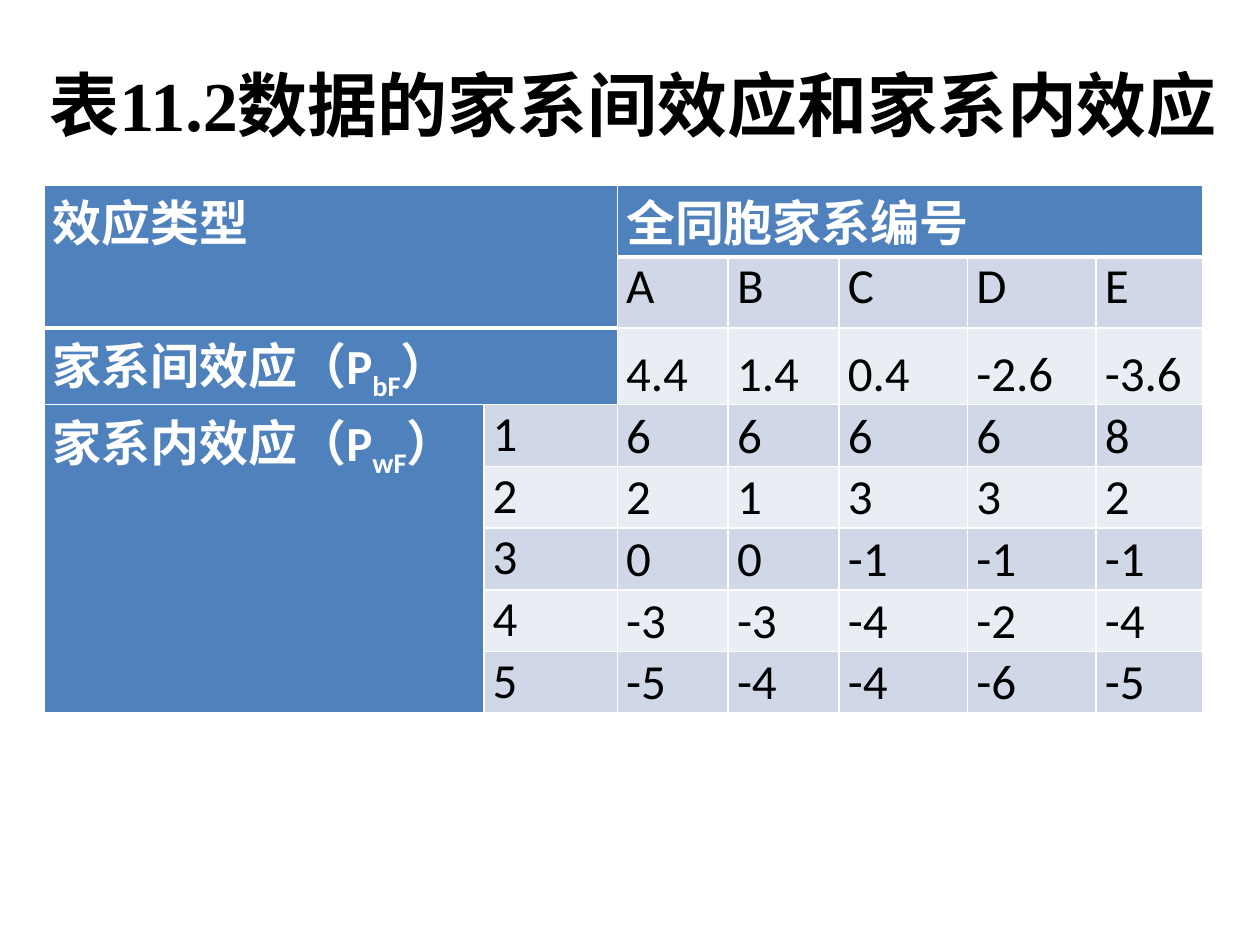
from pptx import Presentation, util as u
from pptx.dml import color
from pptx.enum import text
from pptx.oxml import parse_xml
from pptx.oxml.ns import nsdecls

BLUE, WHITE, BLACK = "4F81BD", "FFFFFF", "000000"
BANDS = ["D0D8E8", "E9EDF4"]
COLS = [3.49, 1.06, 0.88, 0.88, 1.02, 1.02, 0.85]
ROWS = [0.57, 0.56, 0.61] + [0.49] * 5
HEAD = "效应类型", "全同胞家系编号"
BETWEEN, WITHIN = "家系间效应（P|bF|）", "家系内效应（P|wF|）"
DATA = [
    ["A", "B", "C", "D", "E"],
    [4.4, 1.4, 0.4, -2.6, -3.6],
    [6, 6, 6, 6, 8],
    [2, 1, 3, 3, 2],
    [0, 0, -1, -1, -1],
    [-3, -3, -4, -2, -4],
    [-5, -4, -4, -6, -5],
]


def rgb(code):
    """Turn a hex string into a colour."""
    return color.RGBColor.from_string(code)


def style(run, size, face, code, bold):
    """Set the font of a run."""
    font = run.font
    font.size, font.name, font.bold = u.Pt(size), face, bold
    font.color.rgb = rgb(code)


def add_title(slide, box, words):
    """Place and format the title."""
    title = slide.shapes.title
    title.left, title.top, title.width, title.height = map(u.Inches, box)
    frame = title.text_frame
    frame.text = words
    frame.vertical_anchor = text.MSO_ANCHOR.MIDDLE
    para = frame.paragraphs[0]
    para.alignment = text.PP_ALIGN.CENTER
    style(para.runs[0], 40, "Times New Roman", BLACK, True)


def add_edge(cell, side, width):
    """Draw one white border of a cell."""
    cell._tc.get_or_add_tcPr().append(parse_xml(
        f'<a:ln{side} {nsdecls("a")} w="{u.Pt(width)}"><a:solidFill>'
        f'<a:srgbClr val="{WHITE}"/></a:solidFill></a:ln{side}>'))


def paint(cell, row, col):
    """Give a cell its margins, borders and fill."""
    cell.margin_left = cell.margin_right = u.Inches(0.07)
    cell.margin_top = cell.margin_bottom = 0
    last = 1 if col < 2 else 0
    for side in "LRTB":
        thick = (side, row) in [("B", last), ("T", last + 1)]
        add_edge(cell, side, 3 if thick else 1)
    dark = row == 0 or col == 0 or (col == 1 and row < 3)
    cell.fill.solid()
    cell.fill.fore_color.rgb = rgb(BLUE if dark else BANDS[(row + 1) % 2])


def write(cell, words, head=False):
    """Write a cell, with bars around a subscript."""
    para = cell.text_frame.paragraphs[0]
    for i, part in enumerate(str(words).split("|")):
        run = para.add_run()
        run.text = part
        style(run, 28, "Calibri", WHITE if head else BLACK, head)
        if i == 1:
            run.font._element.set("baseline", "-25000")


def add_grid(slide, left, top):
    """Build the table of effects."""
    grid = slide.shapes.add_table(
        len(ROWS), len(COLS), u.Inches(left), u.Inches(top),
        u.Inches(sum(COLS)), u.Inches(sum(ROWS))).table
    for col, width in zip(grid.columns, COLS):
        col.width = u.Inches(width)
    for row, height in zip(grid.rows, ROWS):
        row.height = u.Inches(height)
    for r in range(len(ROWS)):
        for c in range(len(COLS)):
            paint(grid.cell(r, c), r, c)
    heads = [(0, 0, 1, 1, HEAD[0]), (0, 2, 0, 6, HEAD[1]),
             (2, 0, 2, 1, BETWEEN), (3, 0, 7, 0, WITHIN)]
    for r, c, end, edge, words in heads:
        cell = grid.cell(r, c)
        cell.merge(grid.cell(end, edge))
        write(cell, words, True)
    for r, line in enumerate(DATA, 1):
        if r > 2:
            write(grid.cell(r, 1), r - 2)
        for c, value in enumerate(line, 2):
            cell = grid.cell(r, c)
            write(cell, value)
            if r > 1:
                cell.vertical_anchor = text.MSO_ANCHOR.BOTTOM


def main():
    """Build and save the slide."""
    deck = Presentation()
    deck.slide_width, deck.slide_height = u.Inches(10), u.Inches(7.5)
    slide = deck.slides.add_slide(deck.slide_layouts[5])
    add_title(slide, (0.2, 0.36, 9.65, 0.93), "表11.2数据的家系间效应和家系内效应")
    add_grid(slide, 0.35, 1.47)
    deck.save("out.pptx")


if __name__ == "__main__":
    main()
